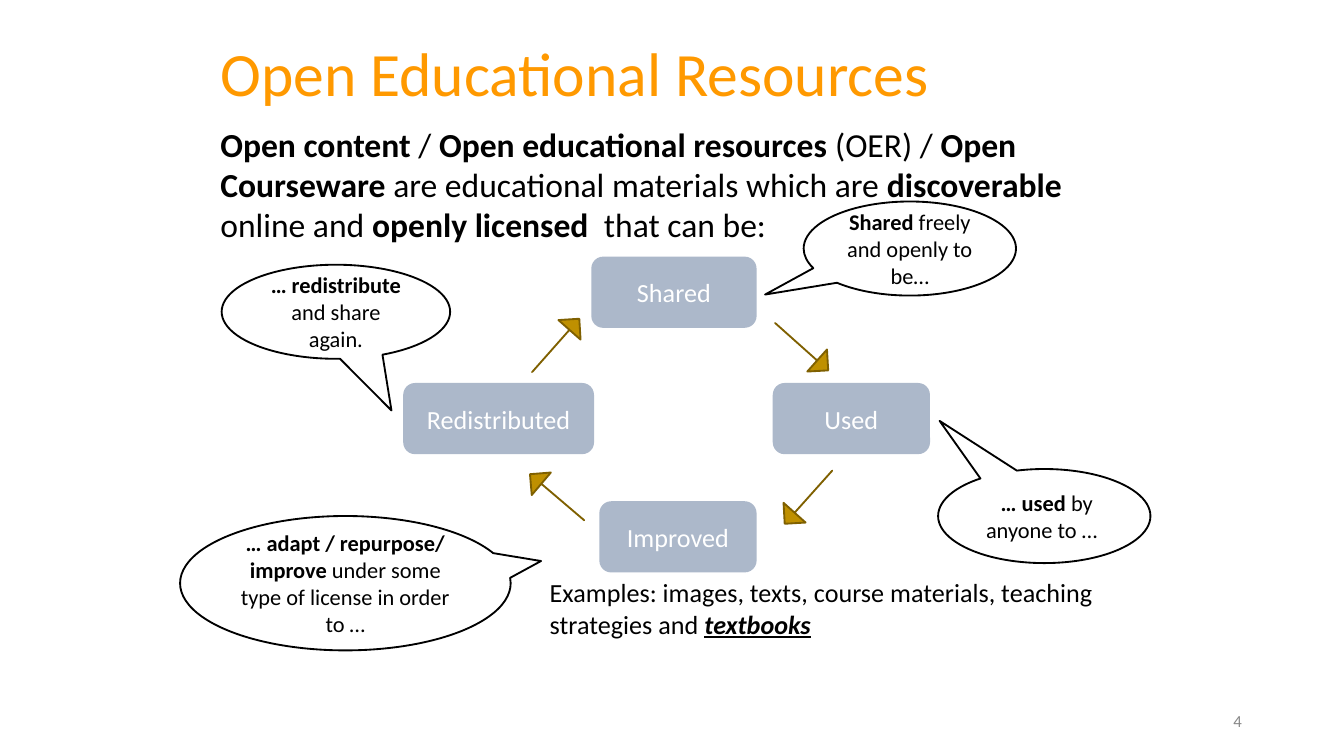
from pptx import Presentation
from pptx.dml.color import RGBColor
from pptx.enum.shapes import MSO_SHAPE as SHAPE
from pptx.enum.text import MSO_ANCHOR as ANCHOR, PP_ALIGN as ALIGN
from pptx.util import Inches, Pt

FONT = "Calibri"
COLORS = {
    "title": "FF9900",
    "text": "000000",
    "white": "FFFFFF",
    "step": "ACB8CA",
    "arrow": "BF9000",
    "arrow_line": "7F6000",
    "number": "888888",
}

# label, left, top, width
STEPS = [
    ("Shared", 4.4, 1.91, 1.23),
    ("Used", 5.75, 2.85, 1.17),
    ("Improved", 4.46, 3.73, 1.17),
    ("Redistributed", 3, 2.85, 1.42),
]

# left, top, rotation
ARROWS = [
    (5.7, 2.47, 41.7),
    (5.75, 3.59, 131.8),
    (3.88, 3.59, 220.4),
    (3.87, 2.46, 311.5),
]

# text, box, tip of the tail
CALLOUTS = [
    ("**Shared** freely and openly to be…", (5.98, 1.5, 1.58, 0.7), (-0.682, 0.489)),
    ("** … used **by anyone to … ", (6.98, 3.49, 1.58, 0.7), (-0.493, -1.012)),
    ("**… adapt / repurpose/ improve **under some type of license in order to …",
     (1.34, 3.84, 2.46, 1), (0.592, -0.165)),
    ("**… redistribute **and share again.", (1.65, 1.97, 1.7, 0.7), (0.243, 1.049)),
]

INTRO = ("**Open content **/ **Open educational resources **(OER) / "
         "**Open Courseware **are educational materials which are **discoverable** "
         "online and **openly licensed**  that can be:")
EXAMPLES = ("Examples: images, texts, course materials, teaching strategies and "
            "**textbooks**")


def rgb(name):
    return RGBColor.from_string(COLORS[name])


def write(shape, text, size, color="text", align=ALIGN.LEFT, anchor=ANCHOR.MIDDLE):
    """Fill a shape with one paragraph; **double stars** enclose bold runs."""
    tf = shape.text_frame
    tf.word_wrap = True
    tf.vertical_anchor = anchor
    tf.margin_left = tf.margin_right = Inches(0.07)
    tf.margin_top = tf.margin_bottom = Inches(0.04)
    p = tf.paragraphs[0]
    p.alignment = align
    p.font.name = FONT
    p.font.size = Pt(size)
    p.font.color.rgb = rgb(color)
    for i, part in enumerate(text.split("**")):
        if part:
            r = p.add_run()
            r.text = part
            r.font.bold = i % 2 == 1
    return p


def add_text(s, text, box, size, **style):
    return write(s.shapes.add_textbox(*map(Inches, box)), text, size, **style)


def add_shape(s, kind, box, fill, line=None):
    sp = s.shapes.add_shape(kind, *map(Inches, box))
    sp.shadow.inherit = False
    sp.fill.solid()
    sp.fill.fore_color.rgb = rgb(fill)
    if line:
        sp.line.color.rgb = rgb(line)
        sp.line.width = Pt(1)
    else:
        sp.line.fill.background()
    return sp


def add_step(s, label, left, top, width):
    sp = add_shape(s, SHAPE.ROUNDED_RECTANGLE, (left, top, width, 0.53), "step")
    write(sp, label, 14, "white", ALIGN.CENTER)


def add_arrow(s, left, top, rotation):
    sp = add_shape(s, SHAPE.NOTCHED_RIGHT_ARROW, (left, top, 0.53, 0.22),
                   "arrow", "arrow_line")
    sp.adjustments[0] = 0
    sp.adjustments[1] = 0.5
    sp.rotation = rotation


def add_callout(s, text, box, tip):
    sp = add_shape(s, SHAPE.OVAL_CALLOUT, box, "white", "text")
    sp.adjustments[0], sp.adjustments[1] = tip
    write(sp, text, 12, align=ALIGN.CENTER)


def main():
    prs = Presentation()
    prs.slide_width = Inches(10)
    prs.slide_height = Inches(10 * 9 / 16)
    s = prs.slides.add_slide(prs.slide_layouts[6])

    title = add_text(s, "Open Educational Resources", (1.57, 0.1, 6.81, 0.94), 33,
                     color="title")
    title.line_spacing = 0.9
    add_text(s, INTRO, (1.57, 0.88, 6.5, 0.98), 18, anchor=ANCHOR.TOP)

    for step in STEPS:
        add_step(s, *step)
    for arrow in ARROWS:
        add_arrow(s, *arrow)
    for callout in CALLOUTS:
        add_callout(s, *callout)

    add_text(s, "4", (7.06, 5.21, 2.25, 0.3), 9, color="number", align=ALIGN.RIGHT)
    examples = add_text(s, EXAMPLES, (4.02, 4.25, 4.52, 0.53), 14, anchor=ANCHOR.TOP)
    textbooks = examples.runs[-1].font
    textbooks.italic = textbooks.underline = True

    prs.save("out.pptx")


if __name__ == "__main__":
    main()
